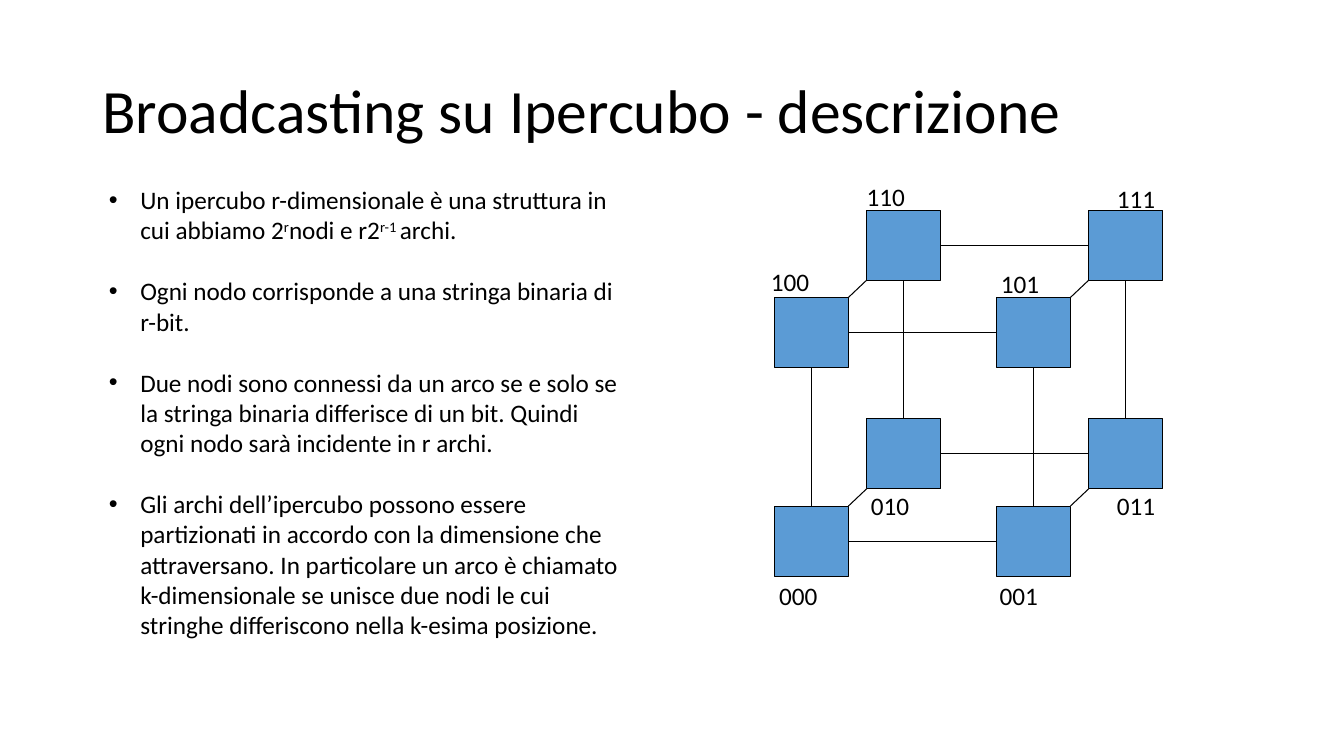
from itertools import product

from lxml import etree
from pptx import Presentation
from pptx.dml.color import RGBColor
from pptx.enum.shapes import MSO_CONNECTOR, MSO_SHAPE
from pptx.enum.text import MSO_ANCHOR, MSO_AUTO_SIZE, PP_ALIGN
from pptx.oxml.ns import qn
from pptx.util import Pt

LINE = MSO_CONNECTOR.STRAIGHT
RECT = MSO_SHAPE.RECTANGLE
MIDDLE = MSO_ANCHOR.MIDDLE
GROW = MSO_AUTO_SIZE.SHAPE_TO_FIT_TEXT
LEFT = PP_ALIGN.LEFT
TOP_SITE, LEFT_SITE, BOTTOM_SITE, RIGHT_SITE = range(4)

FONT = "Calibri"
BLACK = "000000"
BLUE = "5B9BD5"
NODE_W, NODE_H = 53, 50
INDENT = 22.5

POINTS = [
    [("Un ipercubo r-dimensionale è una struttura in cui abbiamo 2", False),
     ("r", True), ("nodi e r2", False), ("r-1 ", True), ("archi.", False)],
    [("Ogni nodo corrisponde a una stringa binaria di r-bit.", False)],
    [("Due nodi sono connessi da un arco se e solo se la stringa binaria "
      "differisce di un bit. Quindi ogni nodo sarà incidente in r archi.", False)],
    [("Gli archi dell’ipercubo possono essere partizionati in accordo con la "
      "dimensione che attraversano. In particolare un arco è chiamato "
      "k-dimensionale se unisce due nodi le cui stringhe differiscono nella "
      "k-esima posizione.", False)],
]

LABELS = {
    "000": (549.4, 411), "001": (707, 411),
    "010": (615, 347), "011": (790.6, 347),
    "100": (543.6, 187), "101": (707.8, 188),
    "110": (612, 126), "111": (790.6, 127.4),
}


def color(text):
    return RGBColor.from_string(text)


def style(para, size):
    para.font.name = FONT
    para.font.size = Pt(size)
    para.font.color.rgb = color(BLACK)


def put_title(slide, text):
    title = slide.shapes.title
    title.left, title.top = Pt(66), Pt(28.8)
    title.width, title.height = Pt(828), Pt(104.4)
    title.text_frame.text = text
    title.text_frame.vertical_anchor = MIDDLE
    para = title.text_frame.paragraphs[0]
    para.alignment = LEFT
    para.line_spacing = 0.9
    style(para, 44)


def add_box(slide, left, top, width, height):
    box = slide.shapes.add_textbox(Pt(left), Pt(top), Pt(width), Pt(height))
    frame = box.text_frame
    frame.word_wrap = True
    frame.auto_size = GROW
    return frame


def add_bullet(para):
    props = para._p.get_or_add_pPr()
    props.set("marL", str(Pt(INDENT)))
    props.set("indent", str(-Pt(INDENT)))
    etree.SubElement(props, qn("a:buFont")).set("typeface", "Arial")
    etree.SubElement(props, qn("a:buChar")).set("char", "•")


def add_points(slide):
    frame = add_box(slide, 70.6, 128.2, 385.2, 334)
    for index, runs in enumerate(POINTS):
        para = frame.add_paragraph() if index else frame.paragraphs[0]
        para.space_before = Pt(22 if index else 0)
        add_bullet(para)
        style(para, 18)
        for text, raised in runs:
            run = para.add_run()
            run.text = text
            if raised:
                run._r.get_or_add_rPr().set("baseline", "30000")


def add_label(slide, text, left, top):
    frame = add_box(slide, left, top, 57, 29)
    frame.text = text
    style(frame.paragraphs[0], 18)


def add_node(slide, left, top):
    node = slide.shapes.add_shape(RECT, Pt(left), Pt(top), Pt(NODE_W), Pt(NODE_H))
    node.shadow.inherit = False
    node.fill.solid()
    node.fill.fore_color.rgb = color(BLUE)
    node.line.color.rgb = color(BLACK)
    node.line.width = Pt(0.75)
    return node


def add_edge(slide, x1=0, y1=0, x2=0, y2=0):
    edge = slide.shapes.add_connector(LINE, x1, y1, x2, y2)
    edge.line.color.rgb = color(BLACK)
    edge.line.width = Pt(0.75)
    etree.SubElement(edge._element.spPr, qn("a:effectLst"))
    return edge


def join(slide, start, site, end, target):
    edge = add_edge(slide)
    edge.begin_connect(start, site)
    edge.end_connect(end, target)


def add_cube(slide):
    nodes = {}
    for up, back, right in product((0, 1), repeat=3):
        left = 553 + 158.6 * right + 66 * back
        top = 361.5 - 149 * up - 62.3 * back
        nodes[up, back, right] = add_node(slide, left, top)
    for a, b in product((0, 1), repeat=2):
        join(slide, nodes[1, a, b], BOTTOM_SITE, nodes[0, a, b], TOP_SITE)
        join(slide, nodes[a, b, 0], RIGHT_SITE, nodes[a, b, 1], LEFT_SITE)
        front, rear = nodes[a, 0, b], nodes[a, 1, b]
        add_edge(slide, front.left + front.width, front.top,
                 rear.left, rear.top + rear.height)
    for text, (left, top) in LABELS.items():
        add_label(slide, text, left, top)


def main():
    deck = Presentation()
    deck.slide_width, deck.slide_height = Pt(960), Pt(540)
    slide = deck.slides.add_slide(deck.slide_layouts[5])
    put_title(slide, "Broadcasting su Ipercubo - descrizione")
    add_points(slide)
    add_cube(slide)
    deck.save("out.pptx")


if __name__ == "__main__":
    main()
